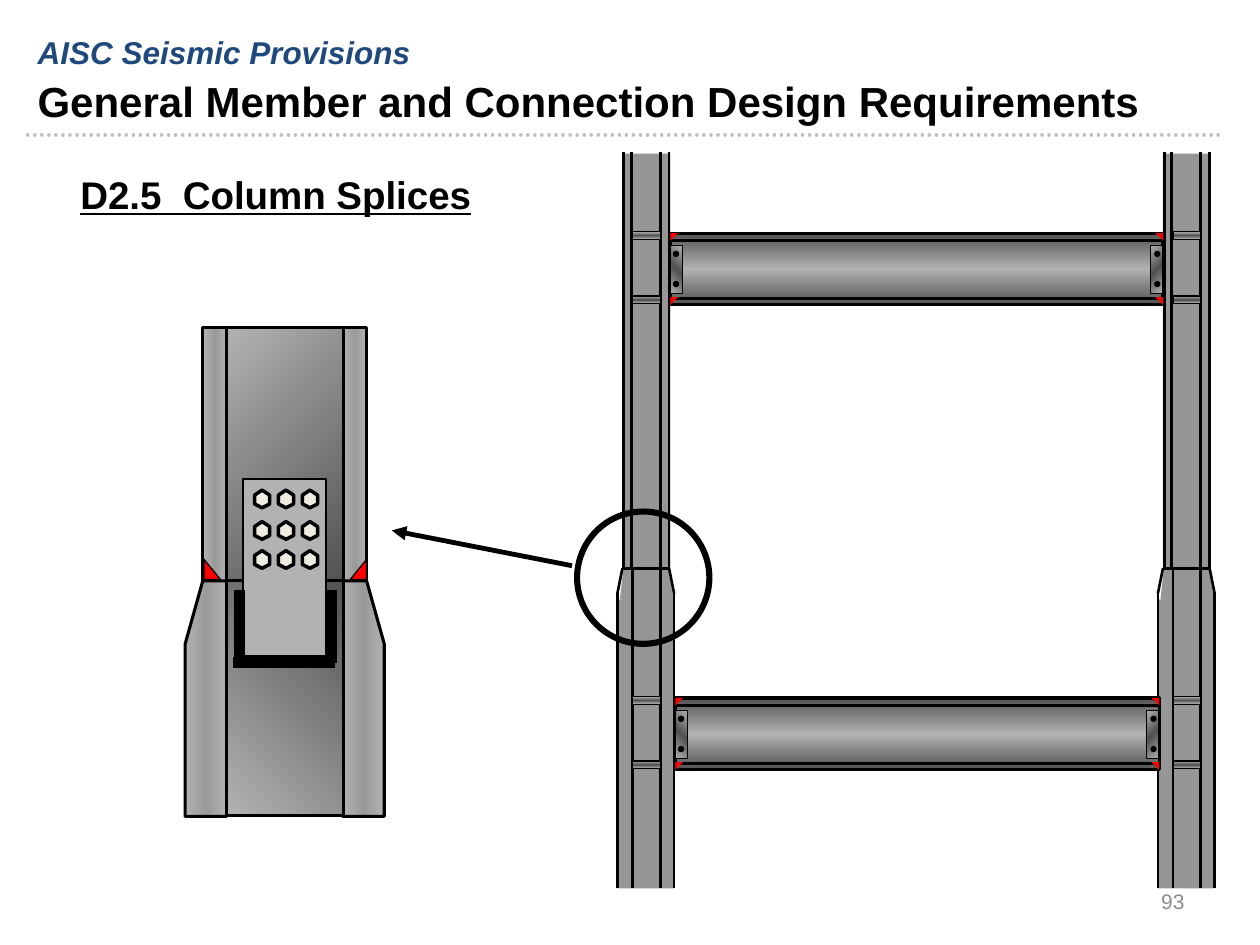
from itertools import product

from lxml import etree
from pptx import Presentation
from pptx import util as u
from pptx.dml.color import RGBColor
from pptx.enum import dml, shapes, text
from pptx.oxml.ns import qn

BLACK = RGBColor(0x00, 0x00, 0x00)
NAVY = RGBColor(0x1F, 0x49, 0x7D)
MUTED = RGBColor(0x8C, 0x8C, 0x8C)
RULE = RGBColor(0xBF, 0xBF, 0xBF)
STEEL = RGBColor(0x96, 0x96, 0x96)
PLATE = RGBColor(0xB2, 0xB2, 0xB2)
MID = RGBColor(0x9A, 0x9A, 0x9A)
DARK = RGBColor(0x52, 0x52, 0x52)
BOLT = RGBColor(0xEE, 0xEC, 0xE1)
WELD = RGBColor(0xFF, 0x00, 0x00)

FLANGE = ([PLATE, MID, PLATE], 0)
BEAM = ([DARK, PLATE, DARK], 90)
TAB = ([PLATE, DARK, PLATE], 45)
STIFF = ([PLATE, DARK, PLATE], 90)

KIND = shapes.MSO_SHAPE
BOX = KIND.RECTANGLE
WEDGE = KIND.RIGHT_TRIANGLE


class Pen:
    font = "Arial"

    def __init__(self, slide):
        self.slide = slide
        self.items = slide.shapes

    def group(self):
        self.items = self.slide.shapes.add_group_shape().shapes

    def ungroup(self):
        self.items = self.slide.shapes

    def paint(self, shape, fill, width):
        shape.shadow.inherit = False
        if fill is None:
            shape.fill.background()
        elif isinstance(fill, RGBColor):
            shape.fill.solid()
            shape.fill.fore_color.rgb = fill
        else:
            self.blend(shape, *fill)
        if width:
            shape.line.color.rgb = BLACK
            shape.line.width = u.Pt(width)
        else:
            shape.line.fill.background()

    def blend(self, shape, tones, angle):
        shape.fill.gradient()
        grad = shape._element.spPr.find(qn("a:gradFill"))
        stops = grad.find(qn("a:gsLst"))
        for stop in list(stops):
            stops.remove(stop)
        for i, tone in enumerate(tones):
            place = str(100000 * i // (len(tones) - 1))
            stop = etree.SubElement(stops, qn("a:gs"), pos=place)
            etree.SubElement(stop, qn("a:srgbClr"), val=str(tone))
        grad.find(qn("a:lin")).set("ang", str(angle * 60000))

    def shape(self, kind, x, y, w, h, fill=None, width=0, flip=""):
        shape = self.items.add_shape(kind, *map(u.Inches, (x, y, w, h)))
        self.paint(shape, fill, width)
        for axis in flip:
            shape._element.spPr.find(qn("a:xfrm")).set("flip" + axis, "1")

    def outline(self, points, fill, width=0):
        points = [(u.Inches(x), u.Inches(y)) for x, y in points]
        form = self.items.build_freeform(*points[0])
        form.add_line_segments(points[1:], close=True)
        self.paint(form.convert_to_shape(), fill, width)

    def line(self, x1, y1, x2, y2, width, color=BLACK, dots=False, arrow=False):
        line = self.items.add_connector(
            shapes.MSO_CONNECTOR.STRAIGHT, *map(u.Inches, (x1, y1, x2, y2)))
        line.line.color.rgb = color
        line.line.width = u.Pt(width)
        props = line._element.spPr
        stroke = props.find(qn("a:ln"))
        if dots:
            line.line.dash_style = dml.MSO_LINE.ROUND_DOT
            stroke.set("cap", "rnd")
        if arrow:
            etree.SubElement(stroke, qn("a:tailEnd"), type="triangle")
        etree.SubElement(props, qn("a:effectLst"))

    def text(self, words, x, y, w, h, size, color=BLACK, bold=True,
             slant=False, under=False, align=text.PP_ALIGN.LEFT,
             anchor=text.MSO_ANCHOR.TOP):
        frame = self.items.add_textbox(*map(u.Inches, (x, y, w, h))).text_frame
        frame.word_wrap = True
        frame.vertical_anchor = anchor
        para = frame.paragraphs[0]
        para.text = words
        para.alignment = align
        font = para.font
        font.name, font.size = self.font, u.Pt(size)
        font.bold, font.italic, font.underline = bold, slant, under
        font.color.rgb = color


def splice(pen):
    pen.group()
    pen.shape(BOX, 2.72, 2.6, 0.19, 2.02, FLANGE, 1.75)
    pen.shape(BOX, 1.8, 2.6, 0.93, 2.02, ([PLATE, DARK], 45), 1.75)
    pen.shape(BOX, 1.61, 2.6, 0.19, 2.02, FLANGE, 1.75)
    for x, side in ((2.72, 1), (1.8, -1)):
        edge, neck = x + side * 0.33, x + side * 0.19
        pen.outline([(x, 4.61), (x, 6.48), (edge, 6.48), (edge, 5.11),
                     (neck, 4.61)], FLANGE, 1.75)
    pen.shape(BOX, 1.8, 4.61, 0.93, 1.86, ([PLATE, DARK], 315), 1.75)
    pen.shape(BOX, 1.93, 3.8, 0.66, 1.41, PLATE, 1.25)
    for x in (1.9, 2.63):
        pen.line(x, 4.68, x, 5.26, 6)
    pen.line(1.85, 5.26, 2.66, 5.26, 6)
    hexagon = ((0.06, 0), (0.12, 0.04), (0.12, 0.11), (0.06, 0.14),
               (0, 0.11), (0, 0.04))
    for y, x in product((3.89, 4.14, 4.37), (2.02, 2.21, 2.4)):
        pen.outline([(x + dx, y + dy) for dx, dy in hexagon], BOLT, 2)
    for x, flip in ((1.62, ""), (2.78, "H")):
        pen.shape(WEDGE, x, 4.44, 0.13, 0.16, WELD, 0.75, flip)


def column(pen, x):
    pen.outline([(x + 0.02, 4.76), (x + 0.05, 4.5), (x + 0.4, 4.5),
                 (x + 0.45, 4.77)], STEEL)
    pen.shape(BOX, x, 4.76, 0.45, 2.29, STEEL)
    pen.shape(BOX, x + 0.04, 1.22, 0.38, 3.29, STEEL)
    for dx in (0.05, 0.11, 0.34, 0.41):
        pen.line(x + dx, 4.52, x + dx, 1.21, 1.5)
    for dx, top in ((0, 4.71), (0.12, 4.52), (0.34, 4.52), (0.45, 4.71)):
        pen.line(x + dx, top, x + dx, 7.05, 1.5)
    pen.line(x, 4.71, x + 0.04, 4.51, 1.5)
    pen.line(x + 0.45, 4.71, x + 0.41, 4.51, 1.5)
    pen.line(x + 0.04, 4.51, x + 0.41, 4.51, 1.5)


def beam(pen, left, right, top):
    pen.shape(BOX, left, top, right - left, 0.57, BEAM, 1.75)
    for y in (top + 0.06, top + 0.52):
        pen.line(left, y, right, y, 1.75)
    ends = ((left, left + 0.02, left, 5.02, "H", "V"),
            (right - 0.1, right - 0.07, right - 0.06, 9.31, "", "HV"))
    for tab, dot, weld, stiff, turn, flip in ends:
        pen.shape(BOX, tab, top + 0.1, 0.1, 0.38, TAB, 0.75, turn)
        for y in (top + 0.14, top + 0.38):
            pen.shape(KIND.OVAL, dot, y, 0.05, 0.05, BLACK)
        for y in (top, top + 0.51):
            pen.shape(WEDGE, weld, y, 0.06, 0.06, WELD, flip=flip)
            pen.shape(BOX, stiff, y - 0.01, 0.22, 0.06, STIFF, 0.75)


def frame(pen):
    pen.group()
    for x in (4.9, 9.19):
        column(pen, x)
    beam(pen, 5.36, 9.2, 5.54)
    beam(pen, 5.32, 9.23, 1.85)
    pen.shape(KIND.OVAL, 4.58, 4.06, 1.05, 1.05, width=3.5)


def main():
    deck = Presentation()
    deck.slide_width, deck.slide_height = u.Inches(10), u.Inches(7.5)
    pen = Pen(deck.slides.add_slide(deck.slide_layouts[6]))
    pen.line(0.22, 1.07, 9.72, 1.07, 2, RULE, dots=True)
    pen.text("General Member and Connection Design Requirements",
             0.2, 0.55, 8.98, 0.44, 24)
    pen.text("AISC Seismic Provisions", 0.2, 0.21, 8.98, 0.31, 18, NAVY,
             slant=True)
    pen.text("93", 7.17, 6.95, 2.33, 0.4, 12, MUTED, bold=False,
             align=text.PP_ALIGN.RIGHT, anchor=text.MSO_ANCHOR.MIDDLE)
    splice(pen)
    frame(pen)
    pen.ungroup()
    pen.line(4.54, 4.49, 3.11, 4.21, 2.75, arrow=True)
    pen.text("D2.5  Column Splices", 0.54, 1.31, 7.73, 0.47, 22, under=True)
    deck.save("out.pptx")


if __name__ == "__main__":
    main()
